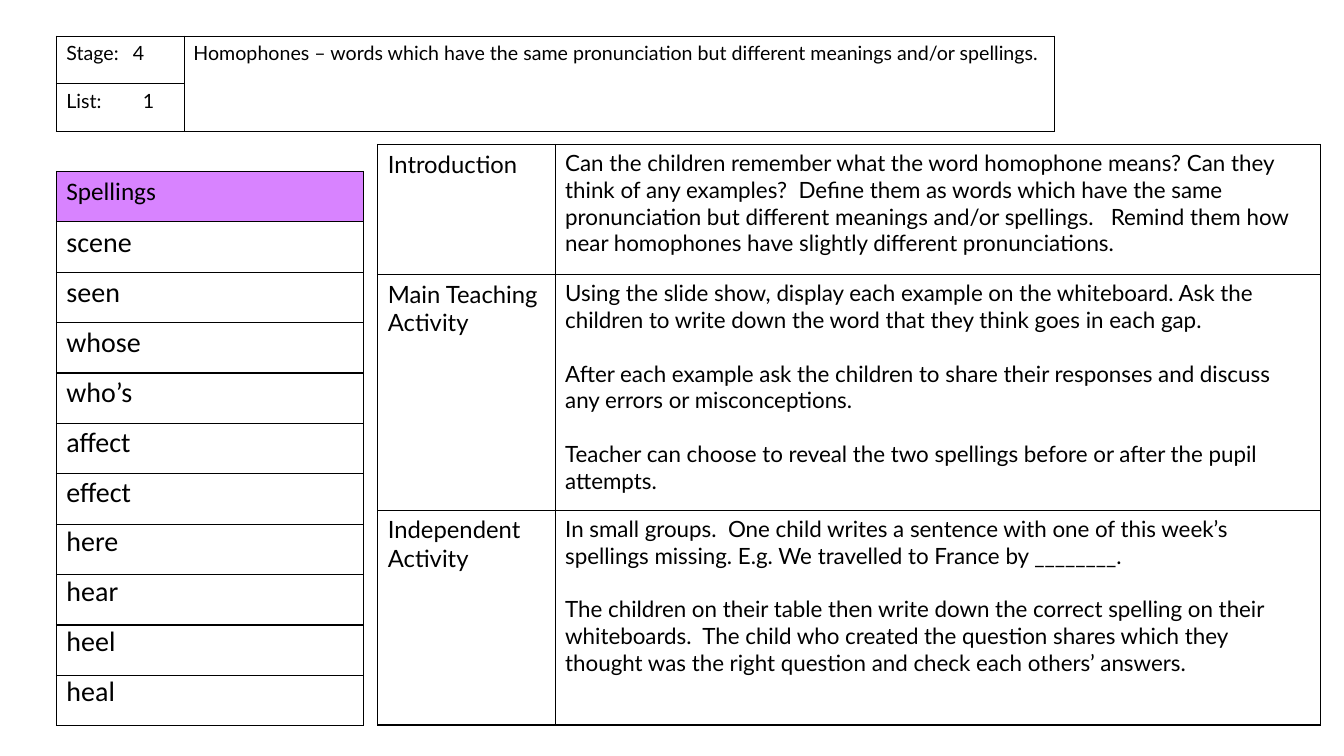
from dataclasses import dataclass

import lxml.etree
import pptx
import pptx.dml.color
import pptx.enum.text
import pptx.oxml.ns
import pptx.shapes.autoshape
import pptx.slide
import pptx.table
import pptx.text.text
import pptx.util
from pptx.util import Cm

BLACK = pptx.dml.color.RGBColor(0x00, 0x00, 0x00)
PURPLE = pptx.dml.color.RGBColor(0xD8, 0x83, 0xFF)
HEADING_FONT = "Lato"
SPELLING_FONT = "Calibri"
PARAGRAPH_GAP = 19.2
WORD_GAP = 11.6

RULE = "Homophones – words which have the same pronunciation but different meanings and/or spellings."
WORDS = ["scene", "seen", "whose", "who’s", "affect", "effect", "here", "hear", "heel", "heal"]


@dataclass
class Grid:
    left: float
    top: float
    columns: list[float]
    rows: list[float]


@dataclass
class Activity:
    name: str
    steps: list[str]


@dataclass
class Number:
    text: str
    top: float
    inset: float


HEADER_GRID = Grid(1.42, 0.91, [3.23, 21.92], [1.2, 1.2])
SPELLING_GRID = Grid(1.42, 4.32, [7.75], [1.27] * (len(WORDS) + 1))
LESSON_GRID = Grid(9.52, 3.64, [4.47, 19.28], [3.28, 5.94, 5.41])

NUMBERS = [Number("4", 0.97, 0.25), Number("1", 2.18, 0.5)]

ACTIVITIES = [
    Activity("Introduction", [
        "Can the children remember what the word homophone means? Can they think of any "
        "examples?  Define them as words which have the same pronunciation but different "
        "meanings and/or spellings.   Remind them how near homophones have slightly "
        "different pronunciations.",
    ]),
    Activity("Main Teaching Activity", [
        "Using the slide show, display each example on the whiteboard. Ask the children to "
        "write down the word that they think goes in each gap.",
        "After each example ask the children to share their responses and discuss any "
        "errors or misconceptions.",
        "Teacher can choose to reveal the two spellings before or after the pupil attempts.",
    ]),
    Activity("Independent Activity", [
        "In small groups.  One child writes a sentence with one of this week’s spellings "
        "missing. E.g. We travelled to France by ________.",
        "The children on their table then write down the correct spelling on their "
        "whiteboards.  The child who created the question shares which they thought was "
        "the right question and check each others’ answers.",
    ]),
]


def write(frame: pptx.text.text.TextFrame, lines: list[str], size: float,
          font: str = HEADING_FONT, gap: float = 0) -> None:
    """Fill a text frame with one left-aligned paragraph per line, gap points apart."""
    frame.text = "\n".join(lines)
    for index, paragraph in enumerate(frame.paragraphs):
        paragraph.alignment = pptx.enum.text.PP_ALIGN.LEFT
        paragraph.space_before = pptx.util.Pt(gap if index else 0)
        paragraph.font.name = font
        paragraph.font.size = pptx.util.Pt(size)
        paragraph.font.color.rgb = BLACK


def add_borders(cell: pptx.table._Cell) -> None:
    properties = cell._tc.get_or_add_tcPr()
    for index, side in enumerate(("a:lnL", "a:lnR", "a:lnT", "a:lnB")):
        line = lxml.etree.Element(pptx.oxml.ns.qn(side), w="12700")
        fill = lxml.etree.SubElement(line, pptx.oxml.ns.qn("a:solidFill"))
        lxml.etree.SubElement(fill, pptx.oxml.ns.qn("a:srgbClr"), val=str(BLACK))
        properties.insert(index, line)


def add_grid(slide: pptx.slide.Slide, grid: Grid) -> pptx.table.Table:
    """Add an unfilled table with black borders."""
    table = slide.shapes.add_table(
        len(grid.rows), len(grid.columns), Cm(grid.left), Cm(grid.top),
        Cm(sum(grid.columns)), Cm(sum(grid.rows))).table
    table.first_row = False
    table.horz_banding = False
    for column, width in zip(table.columns, grid.columns):
        column.width = Cm(width)
    for row, height in zip(table.rows, grid.rows):
        row.height = Cm(height)
    for cell in table.iter_cells():
        cell.fill.background()
        add_borders(cell)
    return table


def place(shape: pptx.shapes.autoshape.Shape, left: float, top: float,
          width: float, height: float) -> pptx.text.text.TextFrame:
    """Move a text shape and return its frame, wrapped and anchored at the top."""
    shape.left, shape.top, shape.width, shape.height = map(Cm, (left, top, width, height))
    frame = shape.text_frame
    frame.word_wrap = True
    frame.auto_size = pptx.enum.text.MSO_AUTO_SIZE.NONE
    frame.vertical_anchor = pptx.enum.text.MSO_ANCHOR.TOP
    return frame


def remove_bullets(frame: pptx.text.text.TextFrame) -> None:
    for paragraph in frame.paragraphs:
        properties = paragraph._p.get_or_add_pPr()
        properties.set("marL", "0")
        properties.set("indent", "0")
        spacing = properties.find(pptx.oxml.ns.qn("a:spcBef"))
        spacing.addnext(lxml.etree.Element(pptx.oxml.ns.qn("a:buNone")))


def add_header(slide: pptx.slide.Slide) -> None:
    table = add_grid(slide, HEADER_GRID)
    table.cell(0, 1).merge(table.cell(1, 1))
    for row, label in enumerate(("Stage:", "List:")):
        write(table.cell(row, 0).text_frame, [label], 14)
    for number in NUMBERS:
        frame = place(slide.shapes.add_textbox(0, 0, 0, 0), 3.1, number.top, 1.2, 1.02)
        frame.margin_left = Cm(number.inset)
        write(frame, [number.text], 14)
        frame.paragraphs[0].line_spacing = 0.9
    write(place(slide.shapes.title, 4.62, 0.91, 21.95, 2.4), [RULE], 14)


def add_spellings(slide: pptx.slide.Slide) -> None:
    heading = add_grid(slide, SPELLING_GRID).cell(0, 0)
    heading.fill.solid()
    heading.fill.fore_color.rgb = PURPLE
    write(heading.text_frame, ["Spellings"], 18, SPELLING_FONT)
    frame = place(slide.placeholders[1], 1.42, 5.54, 7.75, 12.73)
    write(frame, WORDS, 20, SPELLING_FONT, WORD_GAP)
    remove_bullets(frame)


def add_lesson(slide: pptx.slide.Slide) -> None:
    table = add_grid(slide, LESSON_GRID)
    for row, activity in enumerate(ACTIVITIES):
        write(table.cell(row, 0).text_frame, [activity.name], 17)
        write(table.cell(row, 1).text_frame, activity.steps, 16, gap=PARAGRAPH_GAP)


def main() -> None:
    presentation = pptx.Presentation()
    presentation.slide_width, presentation.slide_height = Cm(33.87), Cm(19.05)
    slide = presentation.slides.add_slide(presentation.slide_layouts[1])
    add_header(slide)
    add_spellings(slide)
    add_lesson(slide)
    # Keep the title and word list in front of the tables they sit on.
    for placeholder in list(slide.placeholders):
        slide.shapes._spTree.append(placeholder._element)
    presentation.save("out.pptx")


if __name__ == "__main__":
    main()
